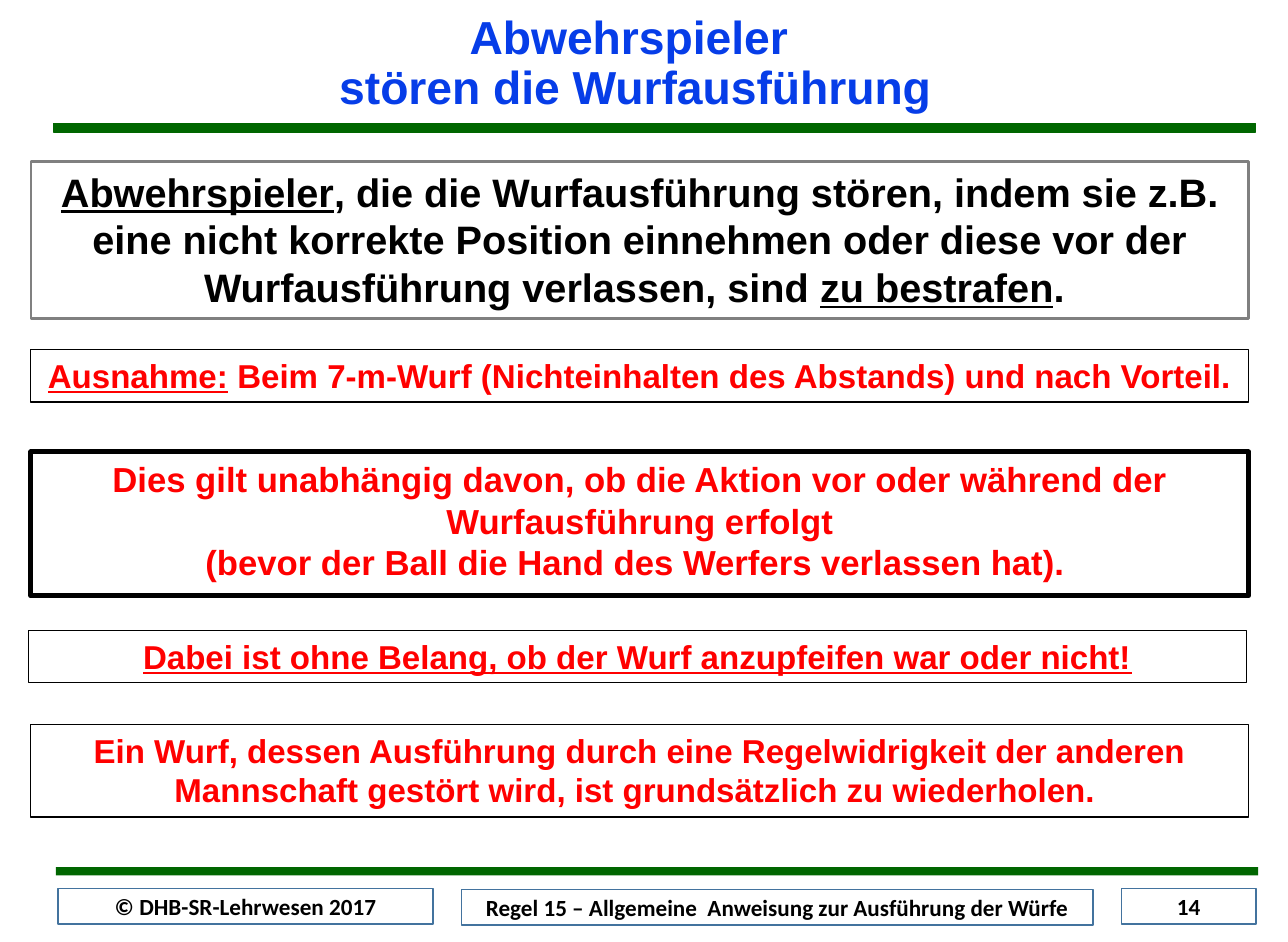
from pptx import Presentation
from pptx.dml.color import RGBColor
from pptx.enum import shapes, text
from pptx.util import Inches, Pt

# Content: each paragraph is a list of (words, underlined) spans
TITLE = [[("Abwehrspieler ", False)], [("stören die Wurfausführung", False)]]
PENALTY = [[
    ("Abwehrspieler", True),
    (", die die Wurfausführung stören, indem sie z.B. eine nicht korrekte "
     "Position einnehmen oder diese vor der Wurfausführung verlassen, sind ", False),
    ("zu bestrafen", True),
    (". ", False),
]]
EXCEPTION = [[
    ("Ausnahme:", True),
    (" Beim 7-m-Wurf (Nichteinhalten des Abstands) und nach Vorteil.", False),
]]
TIMING = [
    [("Dies gilt unabhängig davon, ob die Aktion vor oder während der "
      "Wurfausführung erfolgt", False)],
    [("(bevor der Ball die Hand des Werfers verlassen hat). ", False)],
]
WHISTLE = [[("Dabei ist ohne Belang, ob der Wurf anzupfeifen war oder nicht!", True)]]
REPEAT = [[("Ein Wurf, dessen Ausführung durch eine Regelwidrigkeit der anderen "
            "Mannschaft gestört wird, ist grundsätzlich zu wiederholen. ", False)]]

BLACK, RED, BLUE = "000000", "FF0000", "063DE8"
GREEN, GREY, STEEL, WHITE = "006600", "808080", "43739E", "FFFFFF"

# left, top, height, side inset, paragraphs, size, text colour, line colour, line width
RULE_WIDTH = 10.24
RULES = [
    (0.26, 1.36, 1.32, 0.11, PENALTY, 24, BLACK, GREY, 1.5),
    (0.26, 2.94, 0.44, 0.1, EXCEPTION, 20, RED, BLACK, 0.75),
    (0.26, 3.8, 1.21, 0.11, TIMING, 21, RED, BLACK, 3),
    (0.24, 5.3, 0.44, 0.1, WHISTLE, 20, RED, BLACK, 0.75),
    (0.26, 6.09, 0.78, 0.1, REPEAT, 20, RED, BLACK, 0.75),
]
# left, top, width, words
FOOTERS = [
    (0.49, 7.47, 3.15, "© DHB-SR-Lehrwesen 2017"),
    (3.88, 7.48, 5.31, "Regel 15 – Allgemeine  Anweisung zur Ausführung der Würfe"),
    (9.43, 7.47, 1.13, "14"),
]
# left, top, line width
BARS = [(0.45, 1.04, 0.75), (0.47, 7.29, 0)]


def color(value):
    return RGBColor.from_string(value)


def add_rectangle(page, place, fill, line, width):
    box = page.shapes.add_shape(shapes.MSO_SHAPE.RECTANGLE, *map(Inches, place))
    box.shadow.inherit = False
    if fill:
        box.fill.solid()
        box.fill.fore_color.rgb = color(fill)
    else:
        box.fill.background()
    if width:
        box.line.color.rgb = color(line)
        box.line.width = Pt(width)
    else:
        box.line.fill.background()
    return box


def write(box, paragraphs, size, ink, font="Arial", inset=0.1, spacing=1.0,
          anchor=text.MSO_ANCHOR.TOP):
    frame = box.text_frame
    frame.word_wrap = True
    frame.vertical_anchor = anchor
    frame.margin_left = frame.margin_right = Inches(inset)
    frame.margin_top = frame.margin_bottom = Inches(0.05)
    for index, spans in enumerate(paragraphs):
        para = frame.add_paragraph() if index else frame.paragraphs[0]
        para.alignment = text.PP_ALIGN.CENTER
        para.line_spacing = spacing
        for words, underlined in spans:
            span = para.add_run()
            span.text = words
            span.font.name = font
            span.font.size = Pt(size)
            span.font.bold = True
            span.font.underline = underlined
            span.font.color.rgb = color(ink)


def main():
    deck = Presentation()
    deck.slide_width, deck.slide_height = Inches(10.83), Inches(7.92)
    page = deck.slides.add_slide(deck.slide_layouts[6])

    # Green bars below the title and above the footer
    for left, top, width in BARS:
        add_rectangle(page, (left, top, 10.11, 0.07), GREEN, GREEN, width)

    # Footer boxes
    for left, top, width, words in FOOTERS:
        box = add_rectangle(page, (left, top, width, 0.3), WHITE, STEEL, 1)
        write(box, [[(words, False)]], 14, BLACK, font="Calibri",
              anchor=text.MSO_ANCHOR.MIDDLE)

    # Title
    title = page.shapes.add_textbox(*map(Inches, (2.4, 0.07, 5.88, 0.94)))
    write(title, TITLE, 28, BLUE, spacing=0.9)

    # Rule boxes
    for left, top, height, inset, paragraphs, size, ink, line, width in RULES:
        box = add_rectangle(page, (left, top, RULE_WIDTH, height), None, line, width)
        write(box, paragraphs, size, ink, inset=inset)

    deck.save("out.pptx")


if __name__ == "__main__":
    main()
